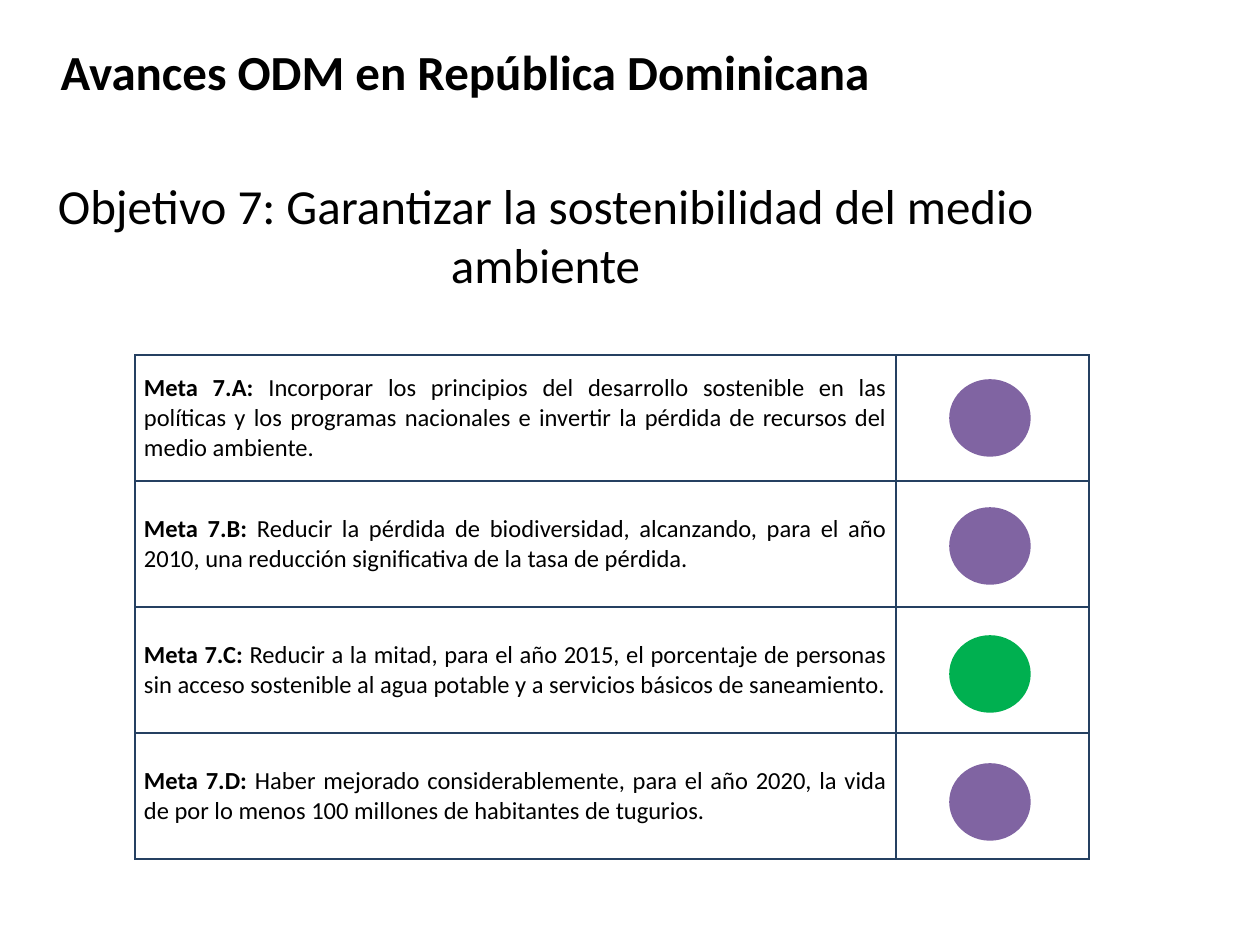
from lxml.etree import SubElement
from pptx import Presentation
from pptx.dml.color import RGBColor
from pptx.enum.shapes import MSO_SHAPE
from pptx.enum.text import MSO_ANCHOR, PP_ALIGN
from pptx.oxml.ns import qn
from pptx.util import Emu, Pt

PX = 914400 / 126
BLACK, NAVY, PURPLE, GREEN = "000000", "254061", "8064A2", "00B050"

GOALS = [
    ("Meta 7.A:", " Incorporar los principios del desarrollo sostenible en las políticas "
     "y los programas nacionales e invertir la pérdida de recursos del medio ambiente.", PURPLE),
    ("Meta 7.B: ", "Reducir la pérdida de biodiversidad, alcanzando, para el año 2010, "
     "una reducción significativa de la tasa de pérdida.", PURPLE),
    ("Meta 7.C:", " Reducir a la mitad, para el año 2015, el porcentaje de personas sin "
     "acceso sostenible al agua potable y a servicios básicos de saneamiento.", GREEN),
    ("Meta 7.D: ", "Haber mejorado considerablemente, para el año 2020, la vida de por lo "
     "menos 100 millones de habitantes de tugurios.", PURPLE),
]


def px(length):
    return Emu(round(length * PX))


def color(code):
    return RGBColor.from_string(code)


class SlideBuilder:
    """Holds the text style and the slide being filled."""

    font = "Calibri"

    def __init__(self, slide):
        self.slide = slide

    def style(self, span, size, bold=False):
        span.font.name = self.font
        span.font.size = Pt(size)
        span.font.bold = bold
        span.font.color.rgb = color(BLACK)

    def set_text(self, shape, text, size, align, bold=False):
        frame = shape.text_frame
        frame.word_wrap = True
        frame.vertical_anchor = MSO_ANCHOR.MIDDLE
        frame.text = text
        para = frame.paragraphs[0]
        para.alignment = align
        self.style(para.runs[0], size, bold)

    def text(self, place, text, size, align):
        box = self.slide.shapes.add_textbox(*map(px, place))
        self.set_text(box, text, size, align)

    def shape(self, kind, place, fill=None):
        shape = self.slide.shapes.add_shape(kind, *map(px, place))
        shape.shadow.inherit = False
        if fill:
            shape.fill.solid()
            shape.fill.fore_color.rgb = color(fill)
            shape.line.color.rgb = color(fill)
            shape.line.width = Pt(2)
        else:
            shape.fill.background()
            shape.line.fill.background()
        return shape

    def banner(self, place, text, size):
        shape = self.shape(MSO_SHAPE.ROUNDED_RECTANGLE, place)
        self.set_text(shape, text, size, PP_ALIGN.LEFT, bold=True)

    def border(self, cell, code):
        properties = cell._tc.get_or_add_tcPr()
        for index, side in enumerate(("a:lnL", "a:lnR", "a:lnT", "a:lnB")):
            line = SubElement(properties, qn(side), w=str(Pt(1)))
            fill = SubElement(line, qn("a:solidFill"))
            SubElement(fill, qn("a:srgbClr"), val=code)
            properties.insert(index, line)

    def goal_table(self, left, top, widths, row_height, goals):
        """Draw one row per goal, with an empty status column on the right."""
        place = (left, top, sum(widths), row_height * len(goals))
        table = self.slide.shapes.add_table(len(goals), len(widths), *map(px, place)).table
        table.first_row = table.horz_banding = False
        for column, width in zip(table.columns, widths):
            column.width = px(width)
        for row, (label, detail, _) in zip(table.rows, goals):
            row.height = px(row_height)
            for cell in row.cells:
                cell.fill.background()
                cell.vertical_anchor = MSO_ANCHOR.MIDDLE
                cell.margin_left = cell.margin_right = px(9)
                cell.margin_top = cell.margin_bottom = px(5)
                self.border(cell, NAVY)
            para = row.cells[0].text_frame.paragraphs[0]
            para.alignment = PP_ALIGN.JUSTIFY
            for words, bold in ((label, True), (detail, False)):
                span = para.add_run()
                span.text = words
                self.style(span, 14, bold)


def main():
    deck = Presentation()
    deck.slide_width, deck.slide_height = px(1260), px(945)
    page = SlideBuilder(deck.slides.add_slide(deck.slide_layouts[6]))

    page.text((-15, 166, 1121, 137),
              "Objetivo 7: Garantizar la sostenibilidad del medio ambiente", 28, PP_ALIGN.CENTER)
    page.goal_table(135, 355, (761, 193), 126, GOALS)
    for index, (_, _, status) in enumerate(GOALS):
        page.shape(MSO_SHAPE.OVAL, (951, 381 + 128 * index, 78, 74), status)
    page.banner((44, 26, 932, 89), "Avances ODM en República Dominicana", 28)

    deck.save("out.pptx")


if __name__ == "__main__":
    main()
